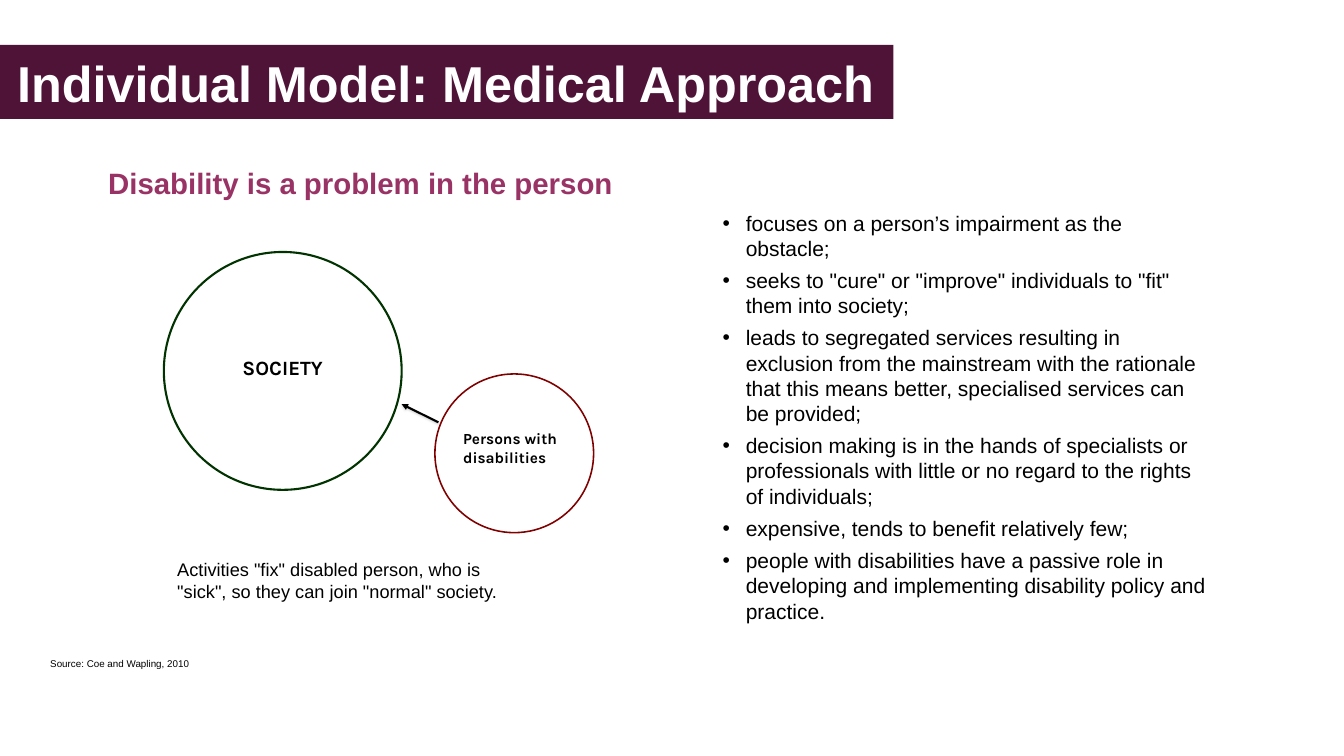
from lxml import etree
from pptx import Presentation
from pptx.dml.color import RGBColor
from pptx.enum.shapes import MSO_CONNECTOR, MSO_SHAPE
from pptx.enum.text import MSO_ANCHOR, MSO_AUTO_SIZE, PP_ALIGN
from pptx.oxml import parse_xml
from pptx.oxml.ns import nsdecls, qn
from pptx.util import Inches, Pt

PLUM = RGBColor(0x4F, 0x13, 0x37)
MAGENTA = RGBColor(0x99, 0x33, 0x65)
GREEN = RGBColor(0x00, 0x33, 0x00)
MAROON = RGBColor(0x80, 0x00, 0x00)
BLACK = RGBColor(0x00, 0x00, 0x00)
WHITE = RGBColor(0xFF, 0xFF, 0xFF)

SLIDE = (0, 0, Inches(26.67), Inches(15))
POINTS = [
    "focuses on a person’s impairment as the obstacle;",
    'seeks to "cure" or "improve" individuals to "fit" them into society;',
    "leads to segregated services resulting in exclusion from the mainstream "
    "with the rationale that this means better, specialised services can be provided;",
    "decision making is in the hands of specialists or professionals "
    "with little or no regard to the rights of individuals;",
    "expensive, tends to benefit relatively few;",
    "people with disabilities have a passive role in developing "
    "and implementing disability policy and practice.",
]


def share(x, y, w, h, box=SLIDE):
    """Turn percentages of a box into left, top, width, height."""
    left, top, width, height = box
    return (int(left + width * x / 100), int(top + height * y / 100),
            int(width * w / 100), int(height * h / 100))


def place(sp, box):
    sp.left, sp.top, sp.width, sp.height = box


def set_frame(sp, anchor=MSO_ANCHOR.TOP, left=0.1, top=0.05):
    tf = sp.text_frame
    tf.word_wrap = True
    tf.auto_size = MSO_AUTO_SIZE.NONE
    tf.vertical_anchor = anchor
    tf.margin_left, tf.margin_right = Inches(left), Inches(0.1)
    tf.margin_top, tf.margin_bottom = Inches(top), Inches(0.05)
    return tf


def write(p, text, size, color=BLACK, font="Arial", bold=False, align=PP_ALIGN.LEFT):
    p.alignment = align
    r = p.add_run()
    r.text = text
    r.font.name, r.font.size, r.font.bold = font, Pt(size), bold
    r.font.color.rgb = color


def add_title(s, box):
    sp = s.shapes.title
    place(sp, box)
    sp.fill.solid()
    sp.fill.fore_color.rgb = PLUM
    tf = set_frame(sp, MSO_ANCHOR.MIDDLE, left=0.34)
    write(tf.paragraphs[0], "Individual Model: Medical Approach", 72, WHITE, bold=True)


def add_text(s, box, text, size, anchor=MSO_ANCHOR.TOP, **style):
    tf = set_frame(s.shapes.add_textbox(*box), anchor)
    write(tf.paragraphs[0], text, size, **style)
    return tf


def add_bullet(p):
    pPr = p._p.get_or_add_pPr()
    pPr.set("marL", str(Inches(0.5)))
    pPr.set("indent", str(Inches(-0.46)))
    clr = etree.SubElement(pPr, qn("a:buClr"))
    etree.SubElement(clr, qn("a:srgbClr"), val=str(BLACK))
    etree.SubElement(pPr, qn("a:buChar"), char="•")


def add_points(s, box):
    sp = s.placeholders[1]
    place(sp, box)
    tf = set_frame(sp)
    for i, text in enumerate(POINTS):
        p = tf.add_paragraph() if i else tf.paragraphs[0]
        add_bullet(p)
        p.space_before = Pt(10 if i else 0)
        write(p, text, 30)
    p.space_after = Pt(10)


def add_shape(group, kind, box, line=None, width=0, fill=None):
    sp = group.shapes.add_shape(kind, *box)
    sp.shadow.inherit = False
    if fill is None:
        sp.fill.background()
    else:
        sp.fill.solid()
        sp.fill.fore_color.rgb = fill
    if line is None:
        sp.line.fill.background()
    else:
        sp.line.color.rgb, sp.line.width = line, Pt(width)
    return sp


def add_arrow(group, box):
    x, y, w, h = box
    arrow = group.shapes.add_connector(MSO_CONNECTOR.STRAIGHT, x, y, x + w, y + h)
    arrow.line.color.rgb, arrow.line.width = BLACK, Pt(3)
    etree.SubElement(arrow.line._get_or_add_ln(), qn("a:headEnd"), type="triangle")
    arrow._element.spPr.append(parse_xml(
        f'<a:effectLst {nsdecls("a")}><a:outerShdw blurRad="{Pt(3.1)}" dist="{Pt(1.8)}" '
        'dir="5400000" rotWithShape="0"><a:srgbClr val="808080"><a:alpha val="35000"/>'
        '</a:srgbClr></a:outerShdw></a:effectLst>'))


def add_diagram(s, box):
    group = s.shapes.add_group_shape()
    # Circles
    add_shape(group, MSO_SHAPE.OVAL, share(0, 0, 55.33, 84.74, box), GREEN, 3)
    persons = add_shape(group, MSO_SHAPE.OVAL,
                        share(63.07, 43.45, 36.93, 56.55, box), MAROON, 2.25)
    write(set_frame(persons, top=0.64).paragraphs[0],
          "Persons with disabilities", 22, font="Karla", bold=True)
    # Label in the large circle
    label = add_shape(group, MSO_SHAPE.RECTANGLE,
                      share(12.66, 35.73, 30.01, 13.11, box), fill=WHITE)
    write(set_frame(label).paragraphs[0], "SOCIETY", 29,
          font="Karla", bold=True, align=PP_ALIGN.CENTER)
    # Arrow from persons to society
    add_arrow(group, share(55.33, 54.22, 8.56, 6.46, box))


def main():
    prs = Presentation()
    prs.slide_width, prs.slide_height = SLIDE[2:]
    s = prs.slides.add_slide(prs.slide_layouts[1])

    # Heading
    add_title(s, share(0, 5.93, 66.48, 9.8))
    tf = add_text(s, share(4.27, 22.07, 45.11, 4.73), "Disability is a problem in the person",
                  42, color=MAGENTA, bold=True, align=PP_ALIGN.CENTER)
    tf.paragraphs[0].line_spacing = 0.9

    # Right column, then left column
    add_points(s, share(53.24, 27.47, 36.97, 58.07))
    add_diagram(s, share(12.19, 33.33, 31.98, 37.13))
    tf = add_text(s, share(12.82, 73.53, 26.43, 6.53),
                  'Activities "fix" disabled person, who is "sick", '
                  'so they can join "normal" society.', 26)
    tf.auto_size = MSO_AUTO_SIZE.SHAPE_TO_FIT_TEXT

    # Source line
    add_text(s, share(3.37, 86.53, 13.12, 2.47), "Source: Coe and Wapling, 2010",
             14, MSO_ANCHOR.MIDDLE)
    prs.save("out.pptx")


if __name__ == "__main__":
    main()
